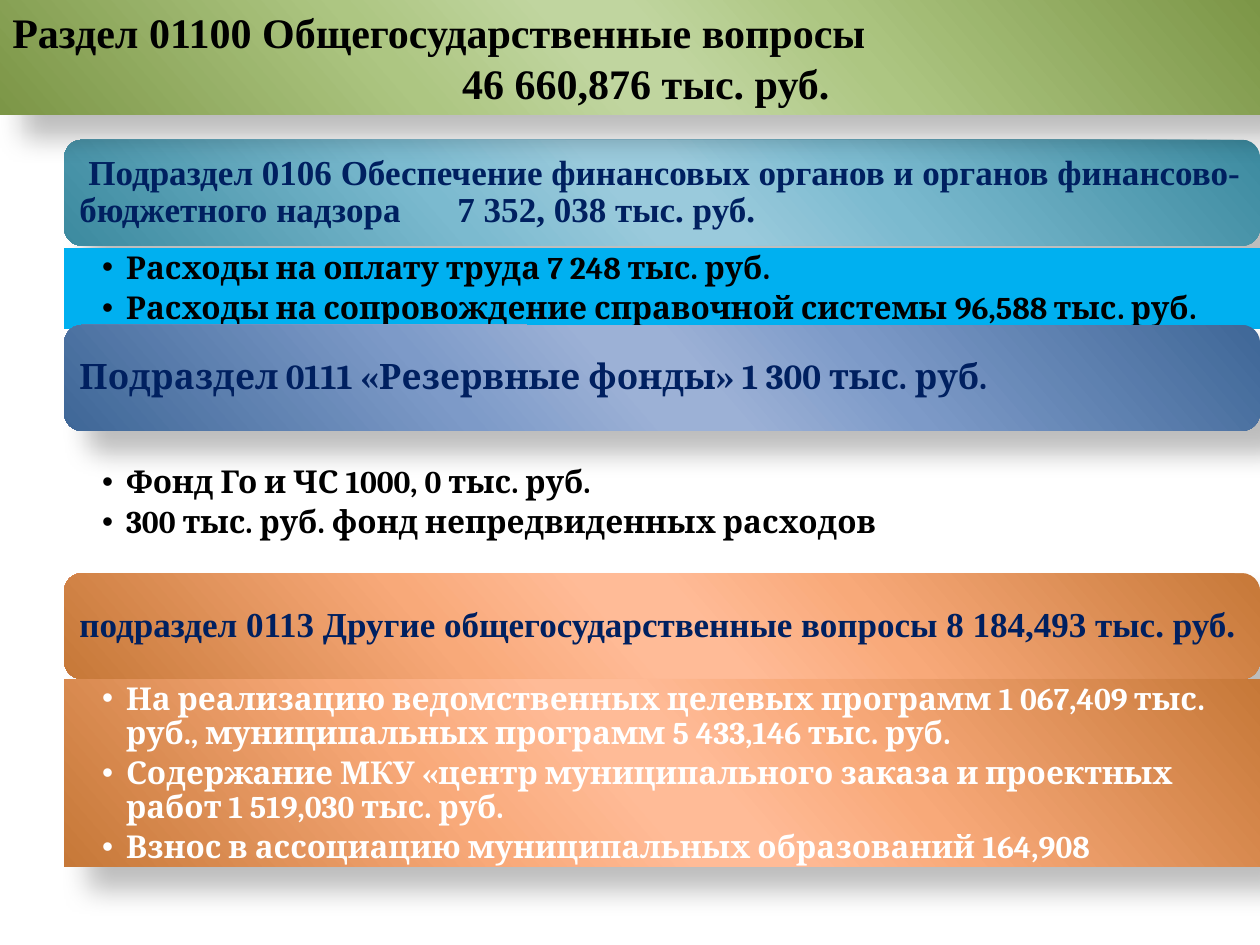
from dataclasses import dataclass
from typing import Optional

from lxml.etree import SubElement
from pptx import Presentation
from pptx.dml.color import RGBColor
from pptx.enum.shapes import MSO_SHAPE as Kind
from pptx.enum.text import MSO_ANCHOR as Anchor
from pptx.oxml import parse_xml
from pptx.oxml.ns import nsdecls, qn
from pptx.util import Inches, Pt

BLACK = RGBColor(0x00, 0x00, 0x00)
WHITE = RGBColor(0xFF, 0xFF, 0xFF)
NAVY = RGBColor(0x00, 0x20, 0x60)
SKY = RGBColor(0x00, 0xB0, 0xF0)
GREEN = [RGBColor.from_string(c) for c in ("7C9647", "ADC682", "C0D59F")]
TEAL = [RGBColor.from_string(c) for c in ("3C8A9F", "7BBACF", "9ACADC")]
BLUE = [RGBColor.from_string(c) for c in ("3F6797", "7D9AC8", "9CB1D6")]
ORANGE = [RGBColor.from_string(c) for c in ("C67838", "F8A979", "FFBB97")]
STOPS = ((0, 0), (33, 1), (47, 2), (53, 2), (68, 1), (100, 0))
SERIF, BODY = "Times New Roman", "Cambria"
WIDE, HIGH = Inches(10), Inches(7.5)
COL, ROW = WIDE / 100, HIGH / 75
LEFT, HEAD = 5.1, 8.4


@dataclass
class Line:
    text: str
    margin: float = 0
    indent: float = 0
    bullet: bool = False
    tab: Optional[float] = None


@dataclass
class Style:
    font: str
    size: int
    color: RGBColor
    insets: tuple
    anchor: Anchor = Anchor.MIDDLE
    space: float = 1
    after: float = 0


@dataclass
class Panel:
    left: float
    top: float
    height: float
    fill: object
    style: Style
    lines: list
    kind: Kind = Kind.RECTANGLE


def shade(shape, tones: list) -> None:
    """Give a shape a slanted six-stop gradient and a soft shadow."""
    stops = "".join(
        f'<a:gs pos="{pos * 1000}"><a:srgbClr val="{tones[i]}"/></a:gs>' for pos, i in STOPS
    )
    props = shape.fill._xPr
    shape.fill.background()
    grad = parse_xml(
        f'<a:gradFill {nsdecls("a")} rotWithShape="1"><a:gsLst>{stops}</a:gsLst>'
        '<a:lin ang="8350000" scaled="1"/></a:gradFill>'
    )
    props.replace(props.find(qn("a:noFill")), grad)
    glow = parse_xml(
        f'<a:outerShdw {nsdecls("a")} blurRad="{Pt(15)}" dist="{Pt(18)}" dir="2700000" '
        'rotWithShape="0"><a:srgbClr val="000000"><a:alpha val="26000"/></a:srgbClr></a:outerShdw>'
    )
    props.find(qn("a:effectLst")).append(glow)


def write(para, line: Line, style: Style) -> None:
    """Write one line of text in the given style."""
    para.text = line.text
    para.line_spacing = style.space
    para.space_after = Pt(style.after)
    props = para._p.get_or_add_pPr()
    props.set("algn", "l")
    props.set("marL", str(int(line.margin * COL)))
    props.set("indent", str(int(line.indent * COL)))
    if line.bullet:
        para.level = 1
        SubElement(props, qn("a:buFont")).set("typeface", "Arial")
        SubElement(props, qn("a:buChar")).set("char", "•")
    if line.tab:
        stop = SubElement(SubElement(props, qn("a:tabLst")), qn("a:tab"))
        stop.set("pos", str(int(line.tab * COL)))
        stop.set("algn", "l")
    font = para.font
    font.name, font.size, font.bold = style.font, Pt(style.size), True
    font.color.rgb = style.color


def draw(slide, panel: Panel) -> None:
    """Draw a panel that reaches the right edge, with its text."""
    left, top = int(panel.left * COL), int(panel.top * ROW)
    shape = slide.shapes.add_shape(panel.kind, left, top, WIDE - left, int(panel.height * ROW))
    shape.shadow.inherit = False
    shape.line.fill.background()
    if panel.fill is None:
        shape.fill.background()
    elif isinstance(panel.fill, list):
        shade(shape, panel.fill)
    else:
        shape.fill.solid()
        shape.fill.fore_color.rgb = panel.fill
    frame, style = shape.text_frame, panel.style
    frame.word_wrap = True
    frame.vertical_anchor = style.anchor
    sides = [int(inset * COL) for inset in style.insets]
    frame.margin_left, frame.margin_top, frame.margin_right, frame.margin_bottom = sides
    for i, line in enumerate(panel.lines):
        write(frame.add_paragraph() if i else frame.paragraphs[0], line, style)


def heading(top: float, tones: list, font: str, line: Line) -> Panel:
    """Make a rounded subsection heading."""
    style = Style(font, 20, NAVY, (0.8,) * 4, space=0.9, after=7)
    return Panel(LEFT, top, HEAD, tones, style, [line], Kind.ROUNDED_RECTANGLE)


def details(top: float, height: float, fill: object, color: RGBColor, *texts: str) -> Panel:
    """Make a bulleted list under a heading."""
    style = Style(BODY, 18, color, (3, 0.3, 1.4, 0.3), Anchor.TOP, 0.9, 3.6)
    return Panel(LEFT, top, height, fill, style, [Line(t, 1.9, -1.9, True) for t in texts])


PANELS = [
    heading(11.1, TEAL, SERIF, Line(
        "Подраздел 0106 Обеспечение финансовых органов и органов "
        "финансово-бюджетного надзора\t7 352, 038 тыс. руб.", indent=0.7, tab=34.6)),
    details(19.7, 6.4, SKY, BLACK,
            "Расходы на оплату труда 7 248 тыс. руб.",
            "Расходы на сопровождение справочной системы 96,588 тыс. руб."),
    heading(25.8, BLUE, BODY, Line("Подраздел 0111 «Резервные фонды» 1 300 тыс. руб.")),
    details(36.7, 6.4, None, BLACK,
            "Фонд Го и ЧС 1000, 0 тыс. руб.",
            "300 тыс. руб. фонд непредвиденных расходов"),
    heading(45.5, ORANGE, SERIF, Line(
        "подраздел 0113 Другие общегосударственные вопросы 8 184,493 тыс. руб.")),
    details(53.9, 14.9, ORANGE, WHITE,
            "На реализацию ведомственных целевых программ 1 067,409 тыс. руб., "
            "муниципальных программ 5 433,146 тыс. руб.",
            "Содержание МКУ «центр муниципального заказа и проектных работ 1 519,030 тыс. руб.",
            "Взнос в ассоциацию муниципальных образований 164,908"),
    Panel(0, 0, 9.1, GREEN, Style(SERIF, 24, BLACK, (1, 0.5, 1, 0.5)), [
        Line("Раздел 01100 Общегосударственные вопросы"),
        Line("46 660,876 тыс. руб.", margin=35.7)]),
]


def main() -> None:
    """Build the slide and save it."""
    deck = Presentation()
    deck.slide_width, deck.slide_height = WIDE, HIGH
    slide = deck.slides.add_slide(deck.slide_layouts[6])
    for panel in PANELS:
        draw(slide, panel)
    deck.save("out.pptx")


if __name__ == "__main__":
    main()
